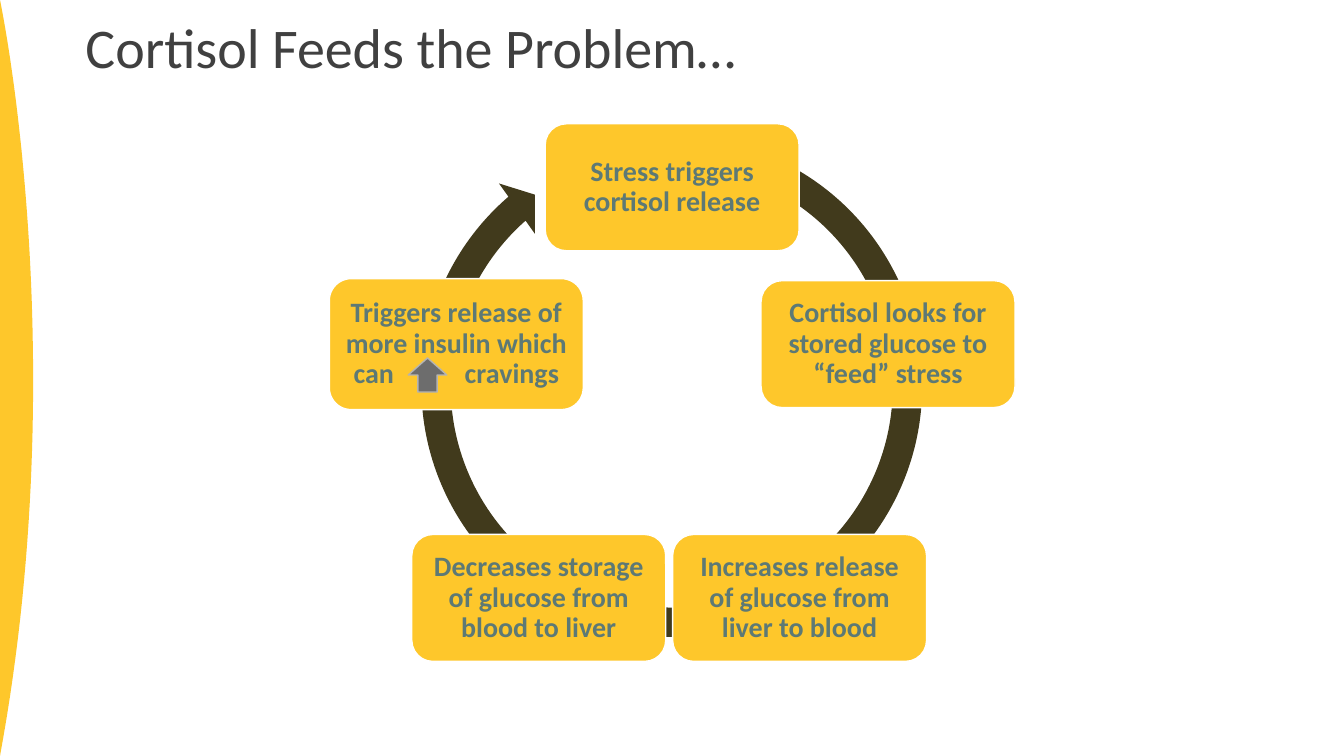
from dataclasses import dataclass
from math import cos, pi, sin

from pptx import Presentation
from pptx.dml.color import RGBColor
from pptx.enum.shapes import MSO_SHAPE
from pptx.enum.text import MSO_ANCHOR, MSO_AUTO_SIZE, PP_ALIGN
from pptx.shapes.autoshape import Shape
from pptx.slide import Slide
from pptx.util import Cm, Pt

YELLOW = RGBColor(0xFE, 0xC7, 0x2B)
BROWN = RGBColor(0x41, 0x3A, 0x1C)
TEAL = RGBColor(0x5D, 0x79, 0x75)
WHITE = RGBColor(0xFF, 0xFF, 0xFF)
DARK_GREY = RGBColor(0x40, 0x40, 0x40)
ARROW_GREY = RGBColor(0x6D, 0x6D, 0x6D)
ARROW_EDGE = RGBColor(0xB5, 0xB4, 0xB3)

FONT = "Calibri"
SLIDE_WIDTH, SLIDE_HEIGHT = 33.87, 19.05
CYCLE_X, CYCLE_Y, CYCLE_RADIUS = 16.94, 10.44, 5.72
STEP_WIDTH = 6.4
STEP_MARGIN = Cm(0.2)
ARROW_GAP = Pt(23)


@dataclass(frozen=True)
class Step:
    text: str
    height: float = 3.2
    shift: float = 0.0
    after_arrow: str = ""


# Clockwise from the top
STEPS = [
    Step("Stress triggers cortisol release"),
    Step("Cortisol looks for stored glucose to “feed” stress"),
    Step("Increases release of glucose from liver to blood", shift=-0.15),
    Step("Decreases storage of glucose from blood to liver"),
    Step("Triggers release of more insulin which can", height=3.3,
         after_arrow="cravings"),
]


def paint(shape: Shape, fill: RGBColor, edge: RGBColor | None = None) -> None:
    shape.shadow.inherit = False
    shape.fill.solid()
    shape.fill.fore_color.rgb = fill
    if edge is None:
        shape.line.fill.background()
    else:
        shape.line.color.rgb = edge
        shape.line.width = Pt(1)


def add_side_curve(slide: Slide) -> None:
    """Yellow bulge along the left edge, sampled from a cubic curve."""
    bulge, pull, samples = 0.74 * 2.54, 3.49 * 2.54, 60
    points = []
    for i in range(samples + 1):
        t = i / samples
        weight = 3 * (1 - t) ** 2 * t
        points.append((Cm(weight * bulge),
                       Cm((1 - t) ** 3 * SLIDE_HEIGHT + weight * pull)))
    outline = slide.shapes.build_freeform(0, 0)
    outline.add_line_segments(points, close=True)
    paint(outline.convert_to_shape(), YELLOW)


def set_title(slide: Slide, text: str) -> None:
    title = slide.shapes.title
    title.left, title.top = Cm(1.9), Cm(0.38)
    title.width, title.height = Cm(27.69), Cm(2.72)
    frame = title.text_frame
    frame.text = text
    frame.auto_size = MSO_AUTO_SIZE.NONE
    frame.vertical_anchor = MSO_ANCHOR.TOP
    heading = frame.paragraphs[0]
    heading.alignment = PP_ALIGN.LEFT
    heading.line_spacing = 0.9
    font = heading.runs[0].font
    font.name, font.size = FONT, Pt(40)
    font.color.rgb = DARK_GREY


def add_cycle_arrow(slide: Slide) -> None:
    ring = slide.shapes.add_shape(MSO_SHAPE.CIRCULAR_ARROW, Cm(10.21), Cm(3.02),
                                  Cm(13.44), Cm(13.44))
    for i, value in enumerate((0.055, 3.307, 137.377, 174.093, 0.058)):
        ring.adjustments[i] = value
    paint(ring, BROWN)


def add_step(slide: Slide, step: Step, angle: float) -> None:
    center_x = CYCLE_X + CYCLE_RADIUS * sin(angle) + step.shift
    center_y = CYCLE_Y - CYCLE_RADIUS * cos(angle)
    box = slide.shapes.add_shape(
        MSO_SHAPE.ROUNDED_RECTANGLE,
        Cm(center_x - STEP_WIDTH / 2), Cm(center_y - step.height / 2),
        Cm(STEP_WIDTH), Cm(step.height))
    paint(box, YELLOW, WHITE)
    frame = box.text_frame
    frame.word_wrap = True
    frame.vertical_anchor = MSO_ANCHOR.MIDDLE
    frame.margin_left = frame.margin_right = STEP_MARGIN
    frame.margin_top = frame.margin_bottom = STEP_MARGIN
    frame.text = step.text
    label = frame.paragraphs[0]
    label.alignment = PP_ALIGN.CENTER
    label.line_spacing = 0.9
    if step.after_arrow:
        # Spacing after the last letter leaves room for the up arrow
        label.runs[0].text = step.text[:-1]
        gap = label.add_run()
        gap.text = step.text[-1] + " "
        gap._r.get_or_add_rPr().set("spc", str(int(ARROW_GAP.pt * 100)))
        label.add_run().text = step.after_arrow
    for run in label.runs:
        run.font.name, run.font.size, run.font.bold = FONT, Pt(20), True
        run.font.color.rgb = TEAL


def main() -> None:
    deck = Presentation()
    deck.slide_width, deck.slide_height = Cm(SLIDE_WIDTH), Cm(SLIDE_HEIGHT)
    slide = deck.slides.add_slide(deck.slide_layouts[5])

    # Background and title
    add_side_curve(slide)
    set_title(slide, "Cortisol Feeds the Problem…")

    # Cycle
    add_cycle_arrow(slide)
    for i, step in enumerate(STEPS):
        add_step(slide, step, 2 * pi * i / len(STEPS))

    # Up arrow standing for "increase"
    increase = slide.shapes.add_shape(MSO_SHAPE.UP_ARROW, Cm(10.29), Cm(9.02),
                                      Cm(0.97), Cm(0.86))
    paint(increase, ARROW_GREY, ARROW_EDGE)

    deck.save("out.pptx")


if __name__ == "__main__":
    main()
